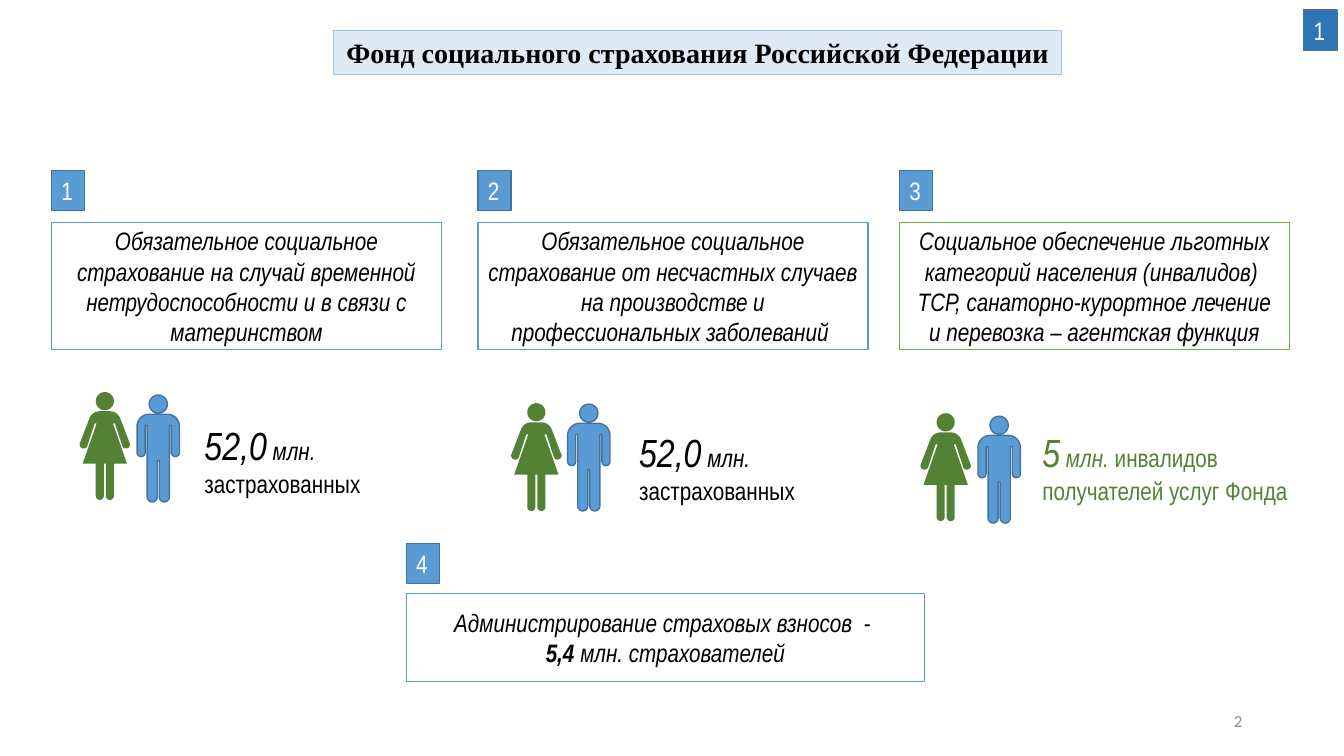
from math import cos, radians, sin

from pptx import Presentation
from pptx.dml.color import RGBColor
from pptx.enum.shapes import MSO_SHAPE
from pptx.enum.text import MSO_ANCHOR, MSO_AUTO_SIZE, PP_ALIGN
from pptx.util import Inches, Pt

BLUE, DARK_BLUE, OUTLINE = "5B9BD5", "2E75B6", "43739E"
GREEN, DARK_GREEN = "70AD47", "548235"
NARROW = "Arial Narrow"
BIG = {"size": 28}
UPRIGHT = {"italic": False}

# Columns: left edge, frame colour, paragraphs
CARDS = [
    (0.51, BLUE, ["Обязательное социальное страхование на случай временной "
                  "нетрудоспособности и в связи с материнством"]),
    (4.74, BLUE, ["Обязательное социальное страхование от несчастных случаев "
                  "на производстве и профессиональных заболеваний "]),
    (8.92, GREEN, ["Социальное обеспечение льготных категорий населения (инвалидов) ",
                   "ТСР, санаторно-курортное лечение и перевозка – агентская функция"]),
]

INSURED = [[("52,0", BIG), " млн."], [("застрахованных", UPRIGHT)]]
RECIPIENTS = [[("5", BIG), " млн. ", ("инвалидов", UPRIGHT)],
              [("получателей услуг Фонда", UPRIGHT)]]

# Groups: woman's centre and top, man's centre and top, text box, colour, paragraphs
GROUPS = [
    ((1.04, 3.89), (1.57, 3.92), (1.93, 4.13, 1.77, 0.88), "000000", INSURED),
    ((5.32, 4.00), (5.84, 4.01), (6.24, 4.20, 1.77, 0.88), "000000", INSURED),
    ((9.38, 4.10), (9.91, 4.13), (10.24, 4.20, 2.69, 0.88), DARK_GREEN, RECIPIENTS),
]


def color(hex_value):
    return RGBColor.from_string(hex_value)


def paint(shape, fill, line=None, width=1):
    shape.shadow.inherit = False
    shape.fill.solid()
    shape.fill.fore_color.rgb = color(fill)
    if line:
        shape.line.color.rgb = color(line)
        shape.line.width = Pt(width)
    else:
        shape.line.fill.background()


def write(shape, paragraphs, size=18, font=NARROW, ink="000000", bold=False,
          italic=False, align=PP_ALIGN.LEFT, anchor=MSO_ANCHOR.TOP,
          wrap=True, grow=False):
    """Each paragraph is a string or a list of strings and (string, format) pairs."""
    frame = shape.text_frame
    frame.word_wrap = wrap
    frame.vertical_anchor = anchor
    frame.auto_size = MSO_AUTO_SIZE.SHAPE_TO_FIT_TEXT if grow else MSO_AUTO_SIZE.NONE
    for index, content in enumerate(paragraphs):
        paragraph = frame.add_paragraph() if index else frame.paragraphs[0]
        paragraph.alignment = align
        for piece in [content] if isinstance(content, str) else content:
            words, changes = (piece, {}) if isinstance(piece, str) else piece
            run = paragraph.add_run()
            run.text = words
            run.font.name = font
            run.font.size = Pt(changes.get("size", size))
            run.font.bold = changes.get("bold", bold)
            run.font.italic = changes.get("italic", italic)
            run.font.color.rgb = color(ink)


def add_box(slide, place, fill, line, width=1):
    box = slide.shapes.add_shape(MSO_SHAPE.RECTANGLE, *map(Inches, place))
    paint(box, fill, line, width)
    return box


def add_badge(slide, left, top, number, fill=BLUE):
    badge = add_box(slide, (left, top, 0.33, 0.4), fill, OUTLINE)
    write(badge, [number], ink="FFFFFF", wrap=False, grow=True)


def add_card(slide, place, frame_color, paragraphs):
    card = add_box(slide, place, "FFFFFF", frame_color)
    write(card, paragraphs, italic=True, align=PP_ALIGN.CENTER,
          anchor=MSO_ANCHOR.MIDDLE)


def add_label(slide, place, paragraphs, **style):
    label = slide.shapes.add_textbox(*map(Inches, place))
    write(label, paragraphs, **style)


def arc(x, y, radius, start, end, steps=12):
    angles = [radians(start + (end - start) * i / steps) for i in range(steps + 1)]
    return [(x + radius * cos(a), y + radius * sin(a)) for a in angles]


def man_half():
    """Right half of the body, measured from the centre line and the top."""
    return [(0, 0.19), *arc(0.09, 0.31, 0.12, -90, 0), *arc(0.17, 0.57, 0.04, 0, 180),
            (0.13, 0.3), (0.11, 0.3), *arc(0.06, 1.01, 0.05, 0, 180), (0.01, 0.65)]


def woman_half():
    return [(0, 0.19), *arc(0.05, 0.3, 0.11, -90, -20), *arc(0.21, 0.52, 0.04, -10, 150),
            (0.1, 0.31), (0.08, 0.31), (0.22, 0.71), (0.09, 0.71),
            *arc(0.05, 1.03, 0.04, 0, 180), (0.01, 0.71)]


def add_person(slide, centre, top, half, fill, line=None):
    body = half + [(-x, y) for x, y in reversed(half)]
    head = arc(0, 0.09, 0.09, 0, 360, 36)
    body, head = ([(Inches(centre + x), Inches(top + y)) for x, y in outline]
                  for outline in (body, head))
    builder = slide.shapes.build_freeform(*body[0])
    builder.add_line_segments(body[1:])
    builder.move_to(*head[0])
    builder.add_line_segments(head[1:])
    paint(builder.convert_to_shape(), fill, line)


def main():
    presentation = Presentation()
    presentation.slide_width = Inches(13.33)
    presentation.slide_height = Inches(7.5)
    slide = presentation.slides.add_slide(presentation.slide_layouts[6])

    # Title and section badge
    title = add_box(slide, (3.31, 0.3, 7.22, 0.44), "DEEBF7", "9DC3E6", 0.75)
    write(title, ["Фонд социального страхования Российской Федерации"], size=20,
          font="Times New Roman", bold=True, align=PP_ALIGN.CENTER, grow=True)
    add_badge(slide, 12.93, 0.1, "1", DARK_BLUE)

    # Three numbered functions
    for number, (left, frame_color, paragraphs) in enumerate(CARDS, 1):
        add_card(slide, (left, 2.21, 3.87, 1.26), frame_color, paragraphs)
        add_badge(slide, left, 1.69, str(number))

    # People covered
    for woman, man, place, ink, paragraphs in GROUPS:
        add_person(slide, *man, man_half(), BLUE, OUTLINE)
        add_person(slide, *woman, woman_half(), DARK_GREEN)
        add_label(slide, place, paragraphs, ink=ink, italic=True, wrap=False, grow=True)

    # Contribution administration
    add_card(slide, (4.03, 5.89, 5.14, 0.87), BLUE,
             ["Администрирование страховых взносов  - ",
              [("5,4 ", {"bold": True}), "млн. страхователей"]])
    add_badge(slide, 4.03, 5.39, "4")

    # Page number
    add_label(slide, (9.42, 6.95, 3, 0.4), ["2"], size=12, font="Calibri",
              ink="8C8C8C", align=PP_ALIGN.RIGHT, anchor=MSO_ANCHOR.MIDDLE)

    presentation.save("out.pptx")


if __name__ == "__main__":
    main()
